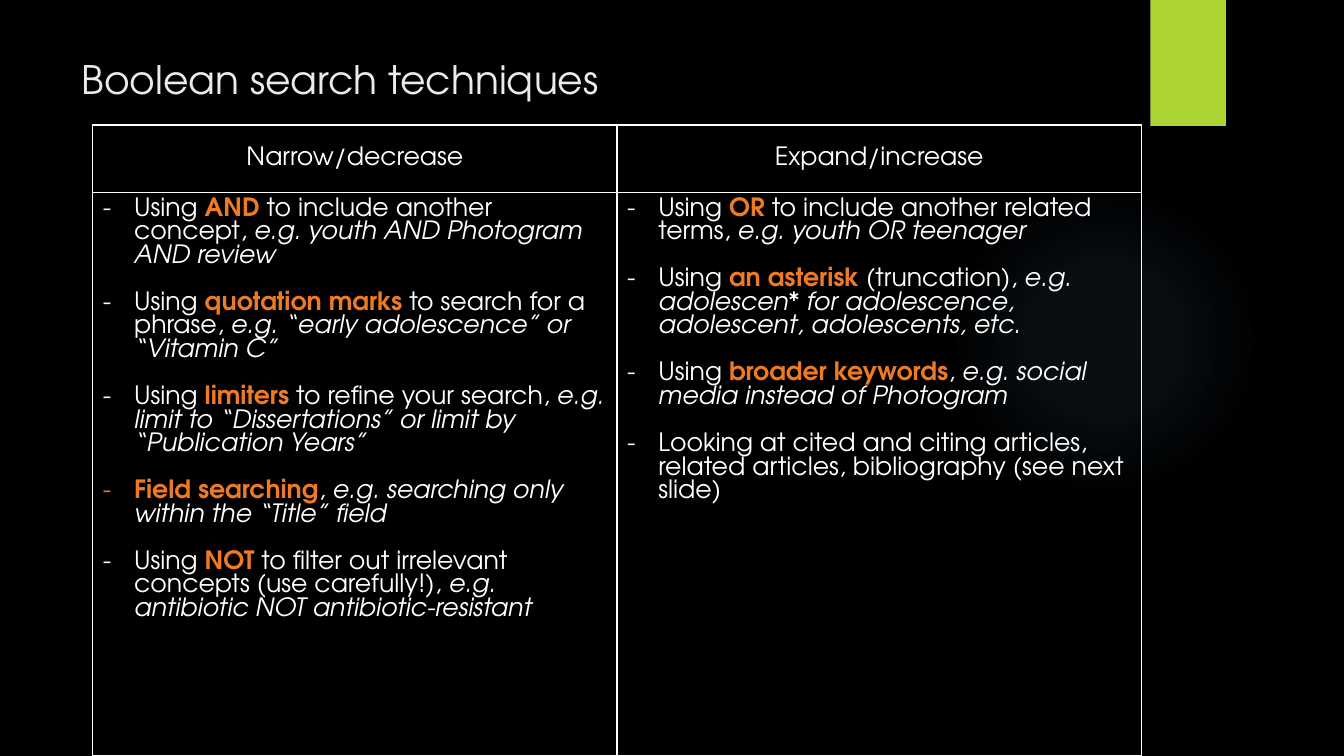
from lxml.etree import SubElement
from pptx import Presentation
from pptx.dml.color import RGBColor
from pptx.enum.shapes import MSO_SHAPE
from pptx.enum.text import MSO_ANCHOR, PP_ALIGN
from pptx.oxml import parse_xml
from pptx.oxml.ns import nsdecls, qn
from pptx.util import Inches, Pt

FONT = "TeX Gyre Adventor"
WHITE, ORANGE, GREEN, GLOW = "FFFFFF", "EF7A24", "ACD433", "7AC4F0"
LINE = 16.8
INDENT = 0.31
COLUMNS, ROWS = (5.2, 5.2), (0.67, 5.59)

NARROW = [
    [("Using ", ""), ("AND", "b"), (" to include another concept, ", ""),
     ("e.g. youth AND Photogram AND review", "i")],
    [("Using ", ""), ("quotation marks ", "b"), ("to search for a phrase, ", ""),
     ("e.g. “early adolescence” or “Vitamin C”", "i")],
    [("Using ", ""), ("limiters", "b"), (" to refine your search, ", ""),
     ("e.g. limit to “Dissertations” or limit by “Publication Years”", "i")],
    [("Field searching", "b"), (", ", ""),
     ("e.g. searching only within the “Title” field", "i")],
    [("Using ", ""), ("NOT", "b"),
     (" to filter out irrelevant concepts (use carefully!), ", ""),
     ("e.g. antibiotic NOT antibiotic-resistant", "i")],
]
EXPAND = [
    [("Using ", ""), ("OR", "b"), (" to include another related terms, ", ""),
     ("e.g. youth OR teenager", "i")],
    [("Using ", ""), ("an asterisk ", "b"), ("(truncation), ", ""),
     ("e.g. adolescen* for adolescence, adolescent, adolescents, etc.", "i")],
    [("Using ", ""), ("broader keywords", "b"), (", ", ""),
     ("e.g. social media instead of Photogram", "i")],
    [("Looking at cited and citing articles, related articles, "
      "bibliography (see next slide)", "")],
]


def rgb(color):
    return RGBColor.from_string(color)


def style_run(r, size, color, bold=False, italic=False):
    r.font.name = FONT
    r.font.size = Pt(size)
    r.font.color.rgb = rgb(color)
    r.font.bold = bold
    r.font.italic = italic


def add_plain(s, kind, left, top, width, height, color):
    sp = s.shapes.add_shape(kind, Inches(left), Inches(top), Inches(width), Inches(height))
    sp.shadow.inherit = False
    sp.fill.solid()
    sp.fill.fore_color.rgb = rgb(color)
    sp.line.fill.background()
    return sp


def add_glow(s):
    sp = add_plain(s, MSO_SHAPE.OVAL, 9.41, 1.83, 3.08, 3.08, GLOW)
    stops = "".join(
        f'<a:gs pos="{pos * 1000}"><a:srgbClr val="{GLOW}">'
        f'<a:alpha val="{alpha * 1000}"/></a:srgbClr></a:gs>'
        for pos, alpha in ((0, 7), (36, 6), (69, 0)))
    gradient = parse_xml(
        f'<a:gradFill {nsdecls("a")}><a:gsLst>{stops}</a:gsLst><a:path path="circle">'
        '<a:fillToRect l="50000" t="50000" r="50000" b="50000"/></a:path></a:gradFill>')
    solid = sp.element.spPr.find(qn("a:solidFill"))
    solid.getparent().replace(solid, gradient)


def set_title(s, text):
    sp = s.shapes.title
    sp.left, sp.top, sp.width, sp.height = map(Inches, (0.71, 0.5, 10.29, 1.53))
    tf = sp.text_frame
    tf.text = text
    tf.vertical_anchor = MSO_ANCHOR.TOP
    p = tf.paragraphs[0]
    p.alignment = PP_ALIGN.LEFT
    style_run(p.runs[0], 28, "EBEBEB")


def set_borders(cell):
    tcPr = cell._tc.get_or_add_tcPr()
    for i, side in enumerate(("lnL", "lnR", "lnT", "lnB")):
        tcPr.insert(i, parse_xml(
            f'<a:{side} {nsdecls("a")} w="12700"><a:solidFill>'
            f'<a:srgbClr val="{WHITE}"/></a:solidFill></a:{side}>'))


def set_heading(cell, text):
    cell.text = text
    cell.vertical_anchor = MSO_ANCHOR.MIDDLE
    p = cell.text_frame.paragraphs[0]
    p.alignment = PP_ALIGN.CENTER
    style_run(p.runs[0], 18, WHITE)


def add_dash(p, color):
    pPr = p._p.get_or_add_pPr()
    pPr.set("marL", str(Inches(INDENT)))
    pPr.set("indent", str(-Inches(INDENT)))
    SubElement(SubElement(pPr, qn("a:buClr")), qn("a:srgbClr")).set("val", color)
    SubElement(pPr, qn("a:buFont")).set("typeface", FONT)
    SubElement(pPr, qn("a:buChar")).set("char", "-")


def set_list(cell, items):
    tf = cell.text_frame
    for i, item in enumerate(items):
        p = tf.add_paragraph() if i else tf.paragraphs[0]
        add_dash(p, ORANGE if item[0][1] == "b" else WHITE)
        p.line_spacing = Pt(LINE)
        p.space_before = Pt(LINE if i else 0)
        for text, mark in item:
            r = p.add_run()
            r.text = text
            style_run(r, 18, ORANGE if mark == "b" else WHITE, mark == "b", mark == "i")


def add_techniques(s):
    table = s.shapes.add_table(
        len(ROWS), len(COLUMNS), Inches(0.92), Inches(1.24),
        Inches(sum(COLUMNS)), Inches(sum(ROWS))).table
    for column, width in zip(table.columns, COLUMNS):
        column.width = Inches(width)
    for row, height in zip(table.rows, ROWS):
        row.height = Inches(height)
    for cell in table.iter_cells():
        cell.fill.background()
        set_borders(cell)
    contents = (("Narrow/decrease", NARROW), ("Expand/increase", EXPAND))
    for i, (heading, items) in enumerate(contents):
        set_heading(table.cell(0, i), heading)
        set_list(table.cell(1, i), items)


def main():
    prs = Presentation()
    prs.slide_width, prs.slide_height = Inches(13.33), Inches(7.5)
    s = prs.slides.add_slide(prs.slide_layouts[5])
    s.background.fill.solid()
    s.background.fill.fore_color.rgb = rgb("000000")
    add_glow(s)
    add_plain(s, MSO_SHAPE.RECTANGLE, 11.41, 0, 0.75, 1.25, GREEN)
    set_title(s, "Boolean search techniques")
    add_techniques(s)
    prs.save("out.pptx")


if __name__ == "__main__":
    main()
